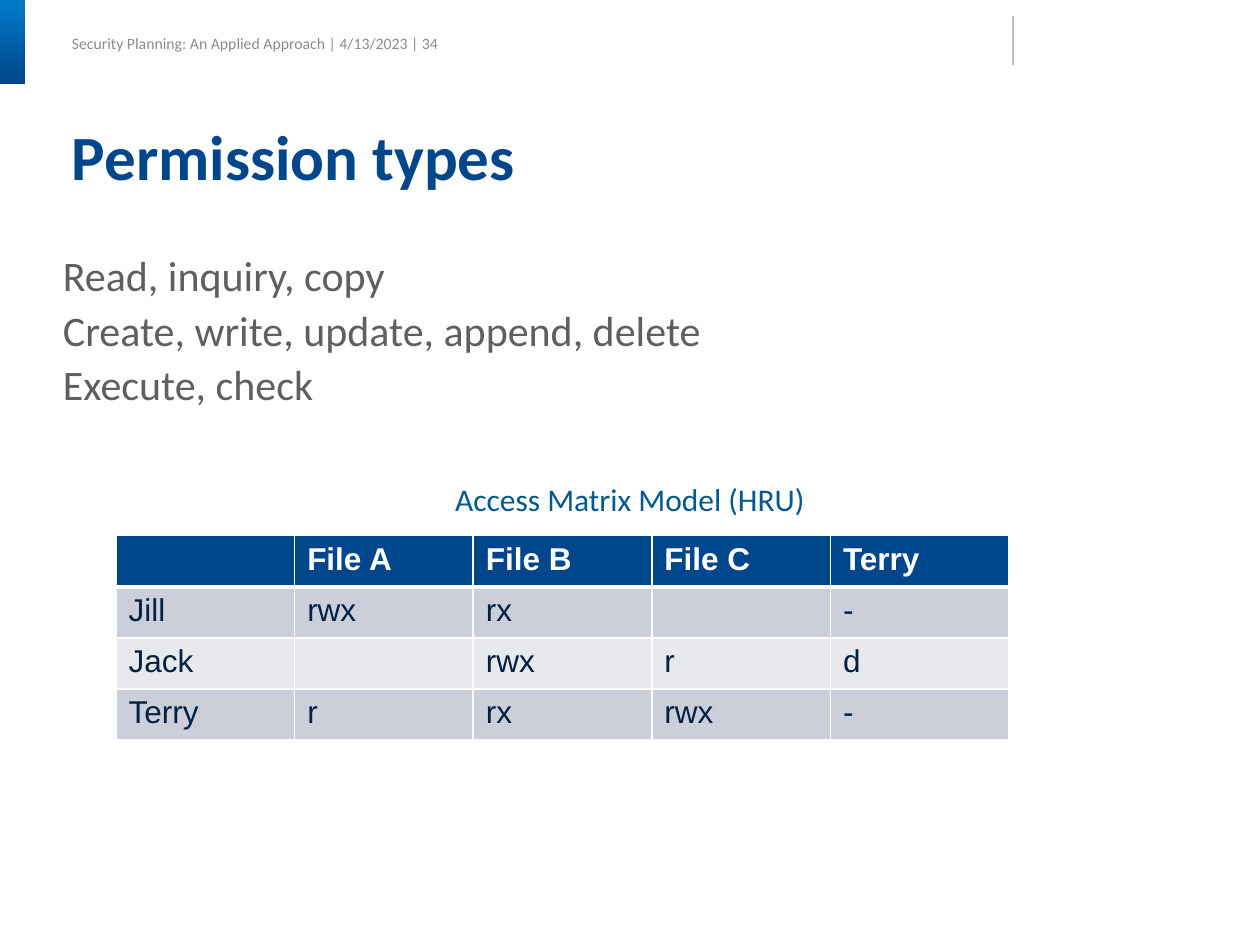
from dataclasses import dataclass

from lxml import etree
from pptx import Presentation
from pptx import util as u
from pptx.dml.color import RGBColor
from pptx.enum import shapes, text
from pptx.oxml import ns


@dataclass(frozen=True)
class Theme:
    heading_font: str = "Calibri"
    table_font: str = "Arial"
    navy: str = "00468A"
    sky: str = "0176C3"
    caption: str = "015892"
    body: str = "5F5F5F"
    header: str = "8C8C8C"
    divider: str = "BFBFBF"
    white: str = "FFFFFF"
    cell_text: str = "002143"
    bands: tuple = ("CCCFDA", "E7E9ED")
    header_size: int = 9
    title_size: int = 36
    body_size: int = 24
    small_size: int = 18


THEME = Theme()

ACCESS_MATRIX = [
    ["", "File A", "File B", "File C", "Terry"],
    ["Jill", "rwx", "rx", "", "-"],
    ["Jack", "", "rwx", "r", "d"],
    ["Terry", "r", "rx", "rwx", "-"],
]


def color(value):
    return RGBColor.from_string(value)


def add_run(paragraph, words, size, ink, font=THEME.heading_font, bold=False):
    run = paragraph.add_run()
    run.text = words
    run.font.name = font
    run.font.size = u.Pt(size)
    run.font.bold = bold
    run.font.color.rgb = color(ink)


def add_text_frame(slide, left, top, width, height, anchor=text.MSO_ANCHOR.TOP):
    """Add a wrapping text box without margins, measured in centimetres."""
    box = slide.shapes.add_textbox(u.Cm(left), u.Cm(top), u.Cm(width), u.Cm(height))
    frame = box.text_frame
    frame.word_wrap = True
    frame.vertical_anchor = anchor
    frame.margin_left = frame.margin_right = frame.margin_top = frame.margin_bottom = 0
    return frame


def add_corner_bar(slide):
    bar = slide.shapes.add_shape(
        shapes.MSO_SHAPE.ROUNDED_RECTANGLE, 0, 0, u.Cm(0.5), u.Cm(1.7))
    bar.adjustments[0] = 0
    bar.shadow.inherit = False
    bar.line.fill.background()
    bar.fill.gradient()
    bar.fill.gradient_angle = 270
    stops = ((0.1, THEME.sky), (1, THEME.navy))
    for stop, (position, shade) in zip(bar.fill.gradient_stops, stops):
        stop.position = position
        stop.color.rgb = color(shade)


def add_divider(slide):
    divider = slide.shapes.add_connector(
        shapes.MSO_CONNECTOR.STRAIGHT, u.Cm(20.42), u.Cm(0.33), u.Cm(20.42), u.Cm(1.32))
    divider.line.color.rgb = color(THEME.divider)
    divider.line.width = u.Pt(0.75)
    etree.SubElement(divider._element.spPr, ns.qn("a:effectLst"))


def add_header(slide):
    frame = add_text_frame(slide, 1.45, 0.58, 7.5, 0.6, text.MSO_ANCHOR.MIDDLE)
    add_run(frame.paragraphs[0], "Security Planning: An Applied Approach | 4/13/2023 | 34",
            THEME.header_size, THEME.header)


def add_title(slide):
    paragraph = add_text_frame(slide, 1.45, 2.54, 22.66, 1.4).paragraphs[0]
    paragraph.line_spacing = 0.9
    add_run(paragraph, "Permission types", THEME.title_size, THEME.navy, bold=True)


def add_body(slide):
    frame = add_text_frame(slide, 1.27, 5.28, 22.86, 6.78)
    lines = ("Read, inquiry, copy", "Create, write, update, append, delete", "Execute, check")
    for index, line in enumerate(lines):
        paragraph = frame.add_paragraph() if index else frame.paragraphs[0]
        paragraph.line_spacing = u.Pt(22)
        paragraph.space_before = u.Pt(9 if index else 0)
        add_run(paragraph, line, THEME.body_size, THEME.body)
    caption = frame.add_paragraph()
    caption.alignment = text.PP_ALIGN.CENTER
    caption.line_spacing = u.Pt(22)
    caption.space_before = u.Pt(40)
    add_run(caption, "Access Matrix Model (HRU)", THEME.small_size, THEME.caption)


def set_borders(cell, top, bottom):
    """Draw white cell borders; top and bottom widths are in points."""
    properties = cell._tc.get_or_add_tcPr()
    widths = (("L", 1), ("R", 1), ("T", top), ("B", bottom))
    for index, (side, width) in enumerate(widths):
        line = etree.Element(ns.qn(f"a:ln{side}"), w=str(u.Pt(width)))
        fill = etree.SubElement(line, ns.qn("a:solidFill"))
        etree.SubElement(fill, ns.qn("a:srgbClr"), val=THEME.white)
        properties.insert(index, line)


def add_matrix(slide):
    rows, columns = len(ACCESS_MATRIX), len(ACCESS_MATRIX[0])
    column_width, row_height = u.Cm(3.6), u.Cm(1.03)
    table = slide.shapes.add_table(
        rows, columns, u.Cm(2.34), u.Cm(10.8),
        column_width * columns, row_height * rows).table
    for column in table.columns:
        column.width = column_width
    for row_index, values in enumerate(ACCESS_MATRIX):
        table.rows[row_index].height = row_height
        is_head = row_index == 0
        shade = THEME.navy if is_head else THEME.bands[(row_index - 1) % 2]
        ink = THEME.white if is_head else THEME.cell_text
        for column_index, value in enumerate(values):
            cell = table.cell(row_index, column_index)
            cell.fill.solid()
            cell.fill.fore_color.rgb = color(shade)
            set_borders(cell, 3 if row_index == 1 else 1, 3 if is_head else 1)
            if value:
                add_run(cell.text_frame.paragraphs[0], value, THEME.small_size, ink,
                        THEME.table_font, is_head)


def main():
    presentation = Presentation()
    presentation.slide_width = u.Cm(25.4)
    presentation.slide_height = u.Cm(19.05)
    slide = presentation.slides.add_slide(presentation.slide_layouts[6])
    add_header(slide)
    add_corner_bar(slide)
    add_divider(slide)
    add_title(slide)
    add_body(slide)
    add_matrix(slide)
    presentation.save("out.pptx")


if __name__ == "__main__":
    main()
